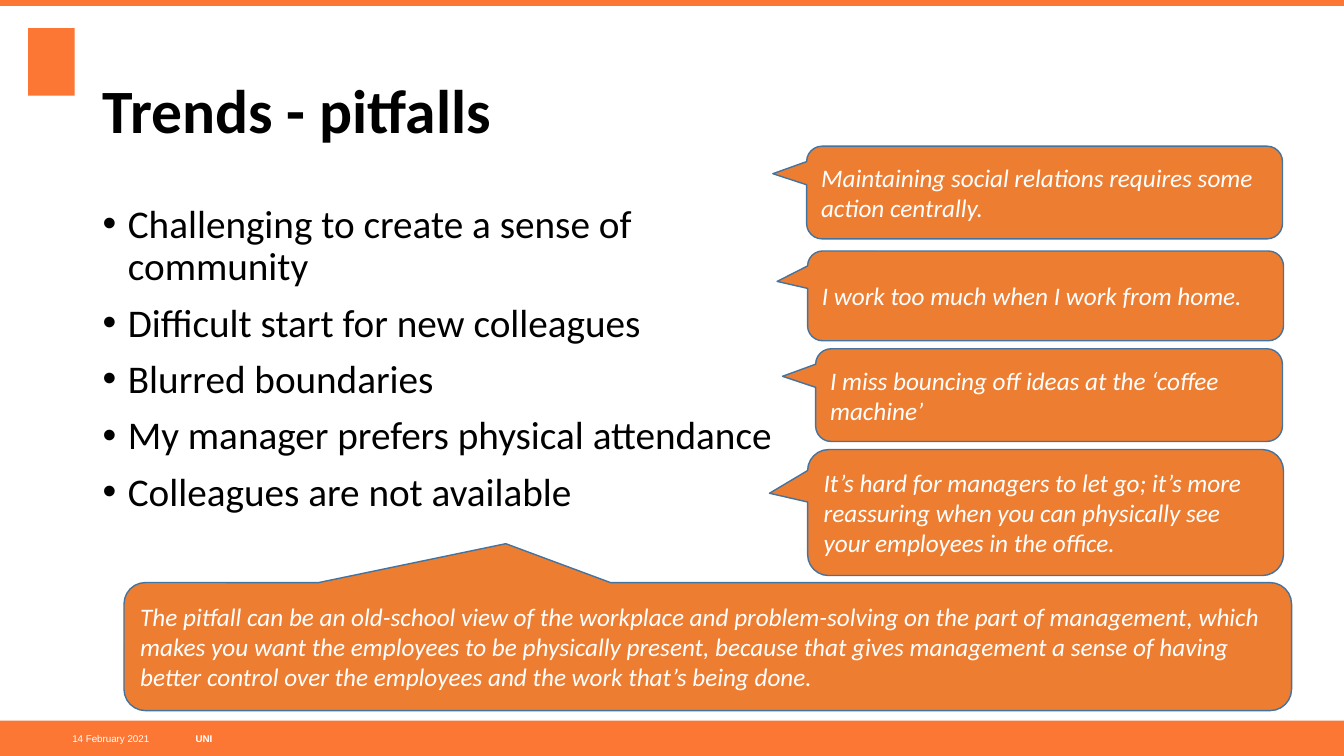
"""Build the slide on pitfalls of working from home."""
from dataclasses import dataclass

from lxml.etree import SubElement
from pptx import Presentation
from pptx.dml.color import RGBColor
from pptx.enum.shapes import MSO_SHAPE
from pptx.enum.text import MSO_ANCHOR, MSO_AUTO_SIZE, PP_ALIGN
from pptx.oxml.ns import qn
from pptx.shapes.autoshape import Shape
from pptx.slide import Slide
from pptx.text.text import TextFrame, _Paragraph
from pptx.util import Inches, Pt

HUES = {
    "brand": "FC7634",
    "bubble": "ED7D31",
    "edge": "43739E",
    "dark": "000000",
    "light": "FFFFFF",
}


@dataclass
class Box:
    left: float
    top: float
    width: float
    height: float

    def spans(self) -> list[int]:
        """Return the four lengths as slide units."""
        return [Inches(v) for v in (self.left, self.top, self.width, self.height)]


@dataclass
class Style:
    size: float
    hue: str
    font: str = "Calibri"
    bold: bool = False
    slant: bool = False


@dataclass
class Bubble:
    box: Box
    tip: tuple[float, float]
    text: str


@dataclass
class Footer:
    box: Box
    text: str
    style: Style
    align: PP_ALIGN


TITLE = Style(44, "dark", bold=True)
POINT = Style(28, "dark")
QUOTE = Style(18, "light", slant=True)

BARS = [
    Box(0.28, 0.28, 0.46, 0.67),
    Box(0, 7.15, 13.33, 0.35),
    Box(0, 0, 13.33, 0.06),
]
FOOTERS = [
    Footer(Box(1.94, 7.15, 3.72, 0.35), "UNI",
           Style(7, "light", "Arial", bold=True), PP_ALIGN.LEFT),
    Footer(Box(0.27, 7.15, 1.21, 0.35), "14 February 2021",
           Style(7, "light", "Arial"), PP_ALIGN.RIGHT),
]
POINTS = [
    "Challenging to create a sense of community",
    "Difficult start for new colleagues",
    "Blurred boundaries",
    "My manager prefers physical attendance",
    "Colleagues are not available",
]
BUBBLES = [
    Bubble(Box(8.01, 2.49, 4.72, 0.89), (-0.564, -0.161),
           "I work too much when I work from home."),
    Bubble(Box(8.01, 4.46, 4.72, 1.25), (-0.58, -0.153),
           "It’s hard for managers to let go; it’s more reassuring when you "
           "can physically see your employees in the office."),
    Bubble(Box(1.23, 5.78, 11.58, 1.27), (-0.173, -0.804),
           "The pitfall can be an old-school view of the workplace and "
           "problem-solving on the part of management, which makes you want "
           "the employees to be physically present, because that gives "
           "management a sense of having better control over the employees "
           "and the work that’s being done."),
    Bubble(Box(8, 1.45, 4.72, 0.92), (-0.571, -0.203),
           "Maintaining social relations requires some action centrally."),
    Bubble(Box(8.09, 3.46, 4.63, 0.92), (-0.571, -0.203),
           "I miss bouncing off ideas at the ‘coffee machine’"),
]


def tint(name: str) -> RGBColor:
    """Look up a named colour."""
    return RGBColor.from_string(HUES[name])


def write(para: _Paragraph, text: str, style: Style,
          align: PP_ALIGN = PP_ALIGN.LEFT) -> None:
    """Add one styled run to a paragraph."""
    para.alignment = align
    run = para.add_run()
    run.text = text
    font = run.font
    font.name, font.size = style.font, Pt(style.size)
    font.bold, font.italic = style.bold, style.slant
    font.color.rgb = tint(style.hue)


def set_frame(frame: TextFrame, anchor: MSO_ANCHOR) -> None:
    """Wrap the text, keep its size and anchor it."""
    frame.word_wrap = True
    frame.auto_size = MSO_AUTO_SIZE.NONE
    frame.vertical_anchor = anchor


def add_block(slide: Slide, kind: MSO_SHAPE, box: Box, hue: str) -> Shape:
    """Draw a filled shape with no outline or shadow."""
    shape = slide.shapes.add_shape(kind, *box.spans())
    shape.shadow.inherit = False
    shape.fill.solid()
    shape.fill.fore_color.rgb = tint(hue)
    shape.line.fill.background()
    return shape


def add_footer(slide: Slide, item: Footer) -> None:
    """Draw one footer text without margins."""
    frame = slide.shapes.add_textbox(*item.box.spans()).text_frame
    set_frame(frame, MSO_ANCHOR.MIDDLE)
    frame.margin_left = frame.margin_right = 0
    frame.margin_top = frame.margin_bottom = 0
    write(frame.paragraphs[0], item.text, item.style, item.align)


def add_title(slide: Slide, text: str) -> None:
    """Place and fill the title."""
    title = slide.shapes.title
    title.left, title.top, title.width, title.height = Box(0.92, 0.4, 11.5, 1.45).spans()
    set_frame(title.text_frame, MSO_ANCHOR.MIDDLE)
    para = title.text_frame.paragraphs[0]
    para.line_spacing = 0.9
    write(para, text, TITLE)


def add_points(slide: Slide, box: Box) -> None:
    """Draw the bullet list."""
    frame = slide.shapes.add_textbox(*box.spans()).text_frame
    set_frame(frame, MSO_ANCHOR.TOP)
    for index, text in enumerate(POINTS):
        para = frame.add_paragraph() if index else frame.paragraphs[0]
        para.line_spacing, para.space_before = 0.9, Pt(10)
        write(para, text, POINT)
        props = para._p.get_or_add_pPr()
        props.set("marL", str(Inches(0.25)))
        props.set("indent", str(Inches(-0.25)))
        SubElement(props, qn("a:buFont")).set("typeface", "Arial")
        SubElement(props, qn("a:buChar")).set("char", "•")


def add_bubble(slide: Slide, item: Bubble) -> None:
    """Draw one speech bubble with its quote."""
    kind = MSO_SHAPE.ROUNDED_RECTANGULAR_CALLOUT
    shape = add_block(slide, kind, item.box, "bubble")
    shape.line.color.rgb = tint("edge")
    shape.line.width = Pt(1)
    for index, value in enumerate((*item.tip, 0.167)):
        shape.adjustments[index] = value
    set_frame(shape.text_frame, MSO_ANCHOR.MIDDLE)
    write(shape.text_frame.paragraphs[0], item.text, QUOTE)


def main() -> None:
    """Build and save the deck."""
    deck = Presentation()
    deck.slide_width, deck.slide_height = Inches(13.33), Inches(7.5)
    slide = deck.slides.add_slide(deck.slide_layouts[5])
    for bar in BARS:
        add_block(slide, MSO_SHAPE.RECTANGLE, bar, "brand")
    for item in FOOTERS:
        add_footer(slide, item)
    add_title(slide, "Trends - pitfalls")
    add_points(slide, Box(0.92, 1.98, 7.01, 4.76))
    for bubble in BUBBLES:
        add_bubble(slide, bubble)
    deck.save("out.pptx")


if __name__ == "__main__":
    main()
